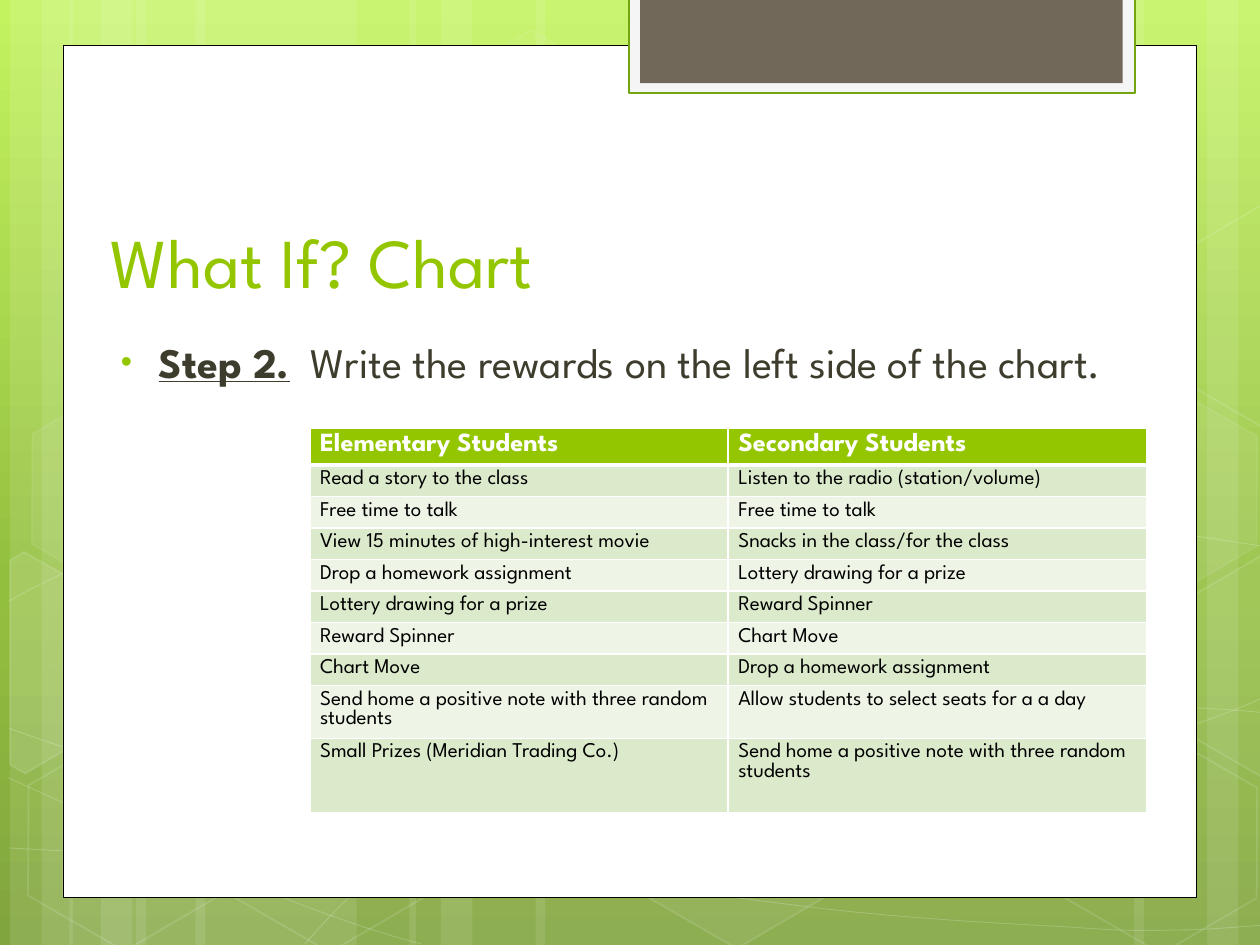
from lxml import etree
from pptx import Presentation
from pptx import util as u
from pptx.dml.color import RGBColor
from pptx.enum import shapes, text
from pptx.oxml import parse_xml
from pptx.oxml.ns import nsdecls, qn

I = u.Inches
FONT = "League Spartan"
C = dict(white="FFFFFF", black="000000", green="94C600", edge="74A510", brown="71685A",
         pale="F5F5F5", ink="3E3D2D", odd="DCEACC", even="EEF5E7")
SKY = [(0, "C3F35F"), (62, "93BF3F"), (100, "81A53E")]

TITLE = "What If? Chart"
STEP = ["Step 2.", "  Write the rewards on the left side of the chart."]
REWARDS = [
    ("Elementary Students", "Secondary Students"),
    ("Read a story to the class", "Listen to the radio (station/volume)"),
    ("Free time to talk", "Free time to talk"),
    ("View 15 minutes of high-interest movie", "Snacks in the class/for the class"),
    ("Drop a homework assignment", "Lottery drawing for a prize"),
    ("Lottery drawing for a prize", "Reward Spinner"),
    ("Reward Spinner", "Chart Move"),
    ("Chart Move", "Drop a homework assignment"),
    ("Send home a positive note with three random students",
     "Allow students to select seats for a a day"),
    ("Small Prizes (Meridian Trading Co.)",
     "Send home a positive note with three random students"),
]
ROW_HEIGHTS = [0.29] + [0.25] * 7 + [0.42, 0.59]

# Full-height light bands: left, width
BANDS = [(1.08, 1.75), (0.08, 0.5), (0.33, 0.83), (1.55, 1.75), (0.55, 0.5), (0.8, 0.83),
         (7.33, 1.75), (9.58, 0.5), (9, 0.83), (4.25, 3.08), (3.25, 0.5), (3.5, 0.83)]
# Bezier chains: start point, then three points for each segment
CURVES = [
    [(0.07, 6.73), (0.61, 6.76), (1.15, 6.79), (1.9, 6.78), (2.65, 6.77), (3.58, 6.75),
     (4.58, 6.65), (5.58, 6.55), (7, 6.36), (7.92, 6.17), (8.83, 5.98), (9.77, 5.68),
     (10.07, 5.51)],
    [(0.07, 4.77), (0.36, 4.61), (0.65, 4.46), (1.21, 4.31), (1.78, 4.16), (2.59, 3.94),
     (3.47, 3.87), (4.36, 3.8), (5.44, 3.79), (6.54, 3.87), (7.64, 3.95), (9.47, 4.26),
     (10.07, 4.34)],
    [(0.06, 6.17), (1.27, 6.72), (2.47, 7.27), (3.34, 7.49)],
    [(0.07, 5.78), (0.38, 5.89), (0.7, 6), (1.28, 6.16), (1.86, 6.31), (2.73, 6.56),
     (3.57, 6.73), (4.4, 6.9), (5.45, 7.08), (6.28, 7.18), (7.11, 7.29), (8, 7.33),
     (8.53, 7.36), (9.05, 7.4), (9.19, 7.38), (9.45, 7.38), (9.71, 7.37), (9.89, 7.35),
     (10.07, 7.34)],
    [(2.42, 7.49), (2.6, 7.29), (2.78, 7.09), (3.02, 6.91), (3.26, 6.73), (3.6, 6.53),
     (3.88, 6.39), (4.16, 6.25), (4.33, 6.19), (4.7, 6.09), (5.06, 5.99), (5.73, 5.85),
     (6.08, 5.78), (6.44, 5.71), (6.49, 5.71), (6.8, 5.69), (7.11, 5.66), (7.6, 5.63),
     (7.94, 5.62), (8.29, 5.61), (8.86, 5.62), (8.86, 5.62), (9.1, 5.62), (9.3, 5.62),
     (9.53, 5.62), (9.71, 5.63), (9.88, 5.64), (10.06, 5.66)],
]
# Hexagons: left, top, fill opacity, line opacity
HEXAGONS = [(3.34, 0.36, 4, 8), (4.97, 5.89, 6, 12), (0.11, 5.91, 0, 12), (0.14, 3.12, 7, 8),
            (1.74, 5.92, 0, 12), (7.53, 4.53, 10, 12), (8.34, 5.93, 0, 12),
            (8.34, 3.14, 7, 8)]
# Hexagons cut by the slide edge: points, fill opacity
CUT_HEXAGONS = [
    ([(0.08, 4.45), (0.19, 4.38), (0.96, 4.82), (0.95, 5.7), (0.2, 6.14), (0.08, 6.07)], 10),
    ([(9.26, 4.85), (10.01, 4.41), (10.09, 4.46), (10.09, 6.13), (10.02, 6.17),
      (9.26, 5.73)], 4),
    ([(9.26, 2.07), (10.01, 1.63), (10.1, 1.68), (10.09, 3.35), (10.02, 3.39),
      (9.26, 2.95)], 0),
]
# Card and tab: left, top, width, height, fill, line colour, line width
PANELS = [(0.5, 0.36, 9, 6.76, "white", "black", 0.5),
          (4.99, -0.02, 4.02, 0.76, "pale", "edge", 1.25),
          (5.08, -0.02, 3.83, 0.68, "brown", None, 0)]


def rgb(name):
    return RGBColor.from_string(C[name])


def solid(fill, name, opacity=100):
    """Fill with a colour; opacity is in percent and 0 means no fill."""
    if not opacity:
        fill.background()
        return
    fill.solid()
    fill.fore_color.rgb = rgb(name)
    if opacity < 100:
        clr = fill._xPr.find(".//" + qn("a:srgbClr"))
        etree.SubElement(clr, qn("a:alpha"), val=str(opacity * 1000))


def paint(sp, fill="white", opacity=100, line=None, width=0, line_opacity=100):
    sp.shadow.inherit = False
    solid(sp.fill, fill, opacity)
    if line:
        sp.line.width = u.Pt(width)
        solid(sp.line.fill, line, line_opacity)
    else:
        sp.line.fill.background()


def add_preset(s, kind, x, y, w, h):
    return s.shapes.add_shape(kind, I(x), I(y), I(w), I(h))


def add_outline(s, points, close):
    start, *rest = [(I(x), I(y)) for x, y in points]
    fb = s.shapes.build_freeform(*start)
    fb.add_line_segments(rest, close=close)
    return fb.convert_to_shape()


def add_curve(s, chain):
    """Draw the chain as an outline, then join each three segments into one Bezier."""
    sp = add_outline(s, chain, False)
    outline = sp._element.find(".//" + qn("a:path"))
    lines = outline.findall(qn("a:lnTo"))
    for i in range(0, len(lines), 3):
        cubic = etree.SubElement(outline, qn("a:cubicBezTo"))
        for line in lines[i:i + 3]:
            cubic.append(line[0])
            outline.remove(line)
    return sp


def add_run(p, words, size, color, bold=False, underline=False):
    r = p.add_run()
    r.text = words
    f = r.font
    f.name, f.size, f.bold, f.underline = FONT, u.Pt(size), bold, underline
    f.color.rgb = rgb(color)


def add_backdrop(s):
    bg = s.background.fill
    bg.gradient()
    bg.gradient_angle = 270
    stops = s.element.find(".//" + qn("a:gsLst"))
    stops[:] = [parse_xml(f'<a:gs {nsdecls("a")} pos="{pos * 1000}">'
                          f'<a:srgbClr val="{hue}"/></a:gs>') for pos, hue in SKY]
    for x, w in BANDS:
        paint(add_preset(s, shapes.MSO_SHAPE.RECTANGLE, x, 0, w, 7.5), opacity=10)
    for chain in CURVES:
        paint(add_curve(s, chain), "white", 0, "white", 0.5, 20)
    for x, y, opacity, line_opacity in HEXAGONS:
        sp = add_preset(s, shapes.MSO_SHAPE.HEXAGON, x, y, 1.75, 1.52)
        sp.adjustments[0] = 0.285
        sp.rotation = 30
        paint(sp, "white", opacity, "white", 1, line_opacity)
    for points, opacity in CUT_HEXAGONS:
        paint(add_outline(s, points, True), "white", opacity, "white", 1, 12)
    for x, y, w, h, fill, line, width in PANELS:
        paint(add_preset(s, shapes.MSO_SHAPE.RECTANGLE, x, y, w, h), fill, 100, line, width)


def place_text(ph, y, h, anchor):
    """Move a placeholder in front of the backdrop and return its first paragraph."""
    ph.left, ph.top, ph.width, ph.height = I(0.78), I(y), I(8.44), I(h)
    ph._element.getparent().append(ph._element)
    tf = ph.text_frame
    tf.word_wrap, tf.auto_size, tf.vertical_anchor = True, text.MSO_AUTO_SIZE.NONE, anchor
    p = tf.paragraphs[0]
    p.alignment = text.PP_ALIGN.LEFT
    return p


def add_step(ph):
    p = place_text(ph, 2.62, 3.71, text.MSO_ANCHOR.TOP)
    p.space_before = u.Pt(5)
    pPr = p._p.get_or_add_pPr()
    pPr.set("marL", str(I(0.38)))
    pPr.set("indent", str(I(-0.3)))
    clr = etree.SubElement(pPr, qn("a:buClr"))
    etree.SubElement(clr, qn("a:srgbClr"), val=C["green"])
    etree.SubElement(pPr, qn("a:buSzPct"), val="76000")
    etree.SubElement(pPr, qn("a:buFont"), typeface="Arial")
    etree.SubElement(pPr, qn("a:buChar"), char="•")
    for words, strong in zip(STEP, (True, False)):
        add_run(p, words, 24, "ink", strong, strong)


def add_rewards(s):
    table = s.shapes.add_table(len(REWARDS), 2, I(2.46), I(3.4), I(6.64),
                               I(sum(ROW_HEIGHTS))).table
    for i, (row, height) in enumerate(zip(REWARDS, ROW_HEIGHTS)):
        table.rows[i].height = I(height)
        head = i == 0
        for j, words in enumerate(row):
            cell = table.cell(i, j)
            cell.margin_left = cell.margin_right = I(0.08)
            cell.margin_top = cell.margin_bottom = I(0.04)
            for side in "LRTB":
                thick = (head and side == "B") or (i == 1 and side == "T")
                cell._tc.get_or_add_tcPr().append(parse_xml(
                    f'<a:ln{side} {nsdecls("a")} w="{u.Pt(3 if thick else 1)}"><a:solidFill>'
                    f'<a:srgbClr val="{C["white"]}"/></a:solidFill></a:ln{side}>'))
            solid(cell.fill, "green" if head else ("even", "odd")[i % 2])
            add_run(cell.text_frame.paragraphs[0], words, 15 if head else 12,
                    "white" if head else "black", head)


def main():
    prs = Presentation()
    prs.slide_width, prs.slide_height = I(10), I(7.5)
    s = prs.slides.add_slide(prs.slide_layouts[1])
    add_backdrop(s)
    add_run(place_text(s.shapes.title, 0.87, 1.58, text.MSO_ANCHOR.BOTTOM), TITLE, 40, "green")
    add_step(s.placeholders[1])
    add_rewards(s)
    prs.save("out.pptx")


if __name__ == "__main__":
    main()
